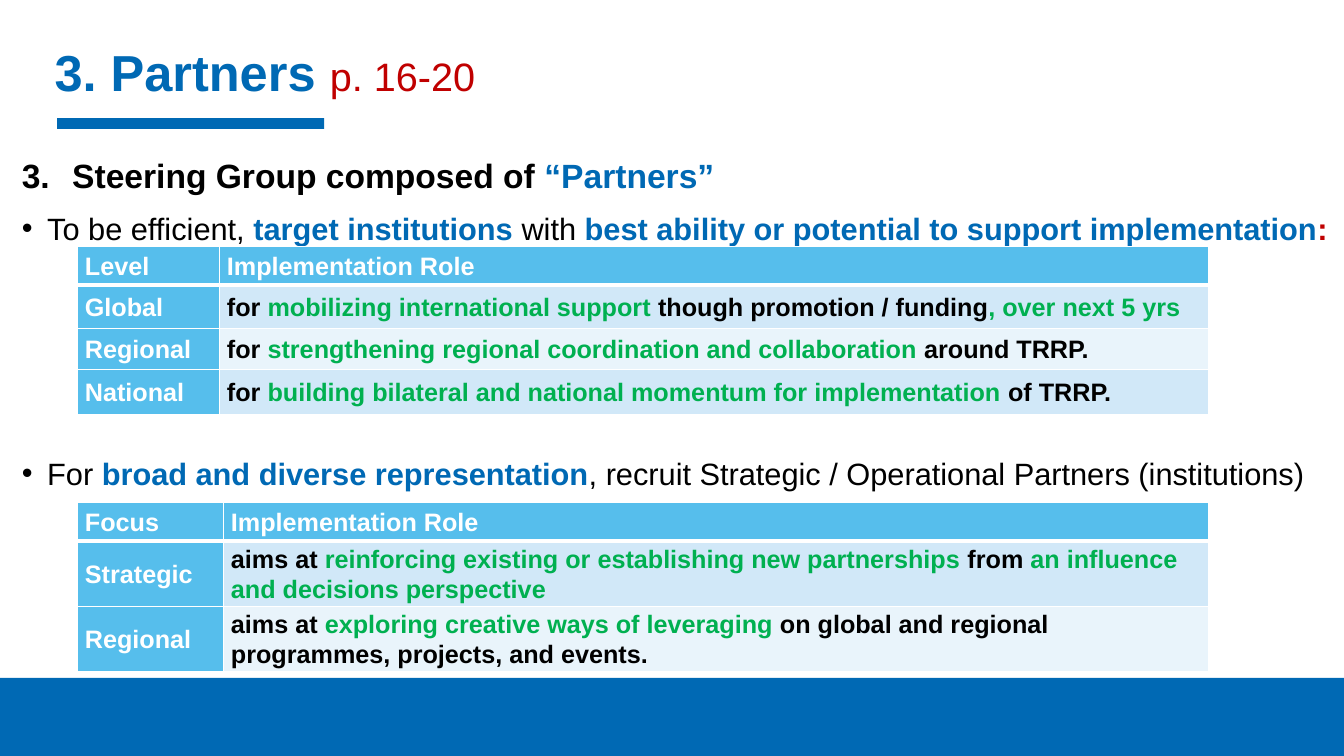
from lxml.etree import SubElement
from pptx import Presentation
from pptx.dml.color import RGBColor
from pptx.enum.shapes import MSO_SHAPE as Shape
from pptx.enum.text import MSO_ANCHOR as Anchor, PP_ALIGN as Align
from pptx.oxml import parse_xml
from pptx.oxml.ns import nsdecls, qn
from pptx.util import Cm, Pt

BLUE = RGBColor(0x00, 0x69, 0xB4)
SKY = RGBColor(0x56, 0xBE, 0xEC)
BANDS = [RGBColor(0xD1, 0xE8, 0xF8), RGBColor(0xE9, 0xF4, 0xFB)]
RED = RGBColor(0xC0, 0x00, 0x00)
GREEN = RGBColor(0x00, 0xB0, 0x50)
BLACK = RGBColor(0x00, 0x00, 0x00)
WHITE = RGBColor(0xFF, 0xFF, 0xFF)


def add_spans(para, spans):
    """Append (text, size, colour, bold) spans to a paragraph."""
    for text, size, color, bold in spans:
        span = para.add_run()
        span.text = text
        span.font.color.rgb = color
        for name, value in {"name": "Arial", "size": Pt(size), "bold": bold}.items():
            setattr(span.font, name, value)


def set_borders(cell, widths):
    """Draw white cell edges; widths maps an edge letter to points."""
    props = cell._tc.get_or_add_tcPr()
    for index, (edge, width) in enumerate(widths.items()):
        props.insert(index, parse_xml(
            f'<a:ln{edge} {nsdecls("a")} w="{Pt(width)}"><a:solidFill>'
            f'<a:srgbClr val="{WHITE}"/></a:solidFill></a:ln{edge}>'))


deck = Presentation()
deck.slide_width, deck.slide_height = Cm(33.87), Cm(19.05)
page = deck.slides.add_slide(deck.slide_layouts[5])

# Title underline and footer band
for left, top, width, height in [(1.44, 2.98, 6.73, 0.27), (0, 17.08, 33.87, 1.97)]:
    bar = page.shapes.add_shape(Shape.RECTANGLE, Cm(left), Cm(top), Cm(width), Cm(height))
    bar.shadow.inherit = False
    bar.fill.solid()
    bar.fill.fore_color.rgb = BLUE
    bar.line.fill.background()

# Title
title = page.shapes.title
title.left, title.top, title.width, title.height = Cm(1.12), Cm(1.08), Cm(32), Cm(1.8)
title.text_frame.vertical_anchor = Anchor.TOP
heading = title.text_frame.paragraphs[0]
heading.alignment = Align.LEFT
heading.line_spacing = 0.9
add_spans(heading, [("3. Partners ", 36.1, BLUE, True), ("p. 16-20", 28.3, RED, False)])

# Body points; the wide space before the last one leaves room for the first table
points = [
    ("buAutoNum", {"type": "arabicPeriod", "startAt": "3"}, 1.27, 0,
     [("Steering Group composed of ", 24, BLACK, True), ("“Partners”", 24, BLUE, True)]),
    ("buChar", {"char": "•"}, 0.64, 0,
     [("To be efficient, ", 22, BLACK, False),
      ("target institutions ", 22, BLUE, True),
      ("with ", 22, BLACK, False),
      ("best ability or potential to support implementation", 22, BLUE, True),
      (":", 22, RED, True)]),
    ("buChar", {"char": "•"}, 0.64, 139,
     [("For ", 22, BLACK, False),
      ("broad and diverse representation", 22, BLUE, True),
      (", recruit Strategic / Operational Partners (institutions)", 22, BLACK, False)]),
]
body = page.shapes.add_textbox(Cm(0.3), Cm(3.84), Cm(33.5), Cm(8.6)).text_frame
frame_format = {"word_wrap": True, "vertical_anchor": Anchor.TOP, "margin_left": Cm(0.25),
                "margin_right": 0, "margin_top": 0, "margin_bottom": 0}
for name, value in frame_format.items():
    setattr(body, name, value)
for index, (bullet, options, indent, before, spans) in enumerate(points):
    para = body.add_paragraph() if index else body.paragraphs[0]
    props = para._p.get_or_add_pPr()
    props.set("marL", str(Cm(indent)))
    props.set("indent", str(-Cm(indent)))
    SubElement(props, qn("a:buFont"), typeface="Arial")
    SubElement(props, qn(f"a:{bullet}"), **options)
    para.line_spacing = 1.07
    para.space_after = Pt(8)
    if before:
        para.space_before = Pt(before)
    add_spans(para, spans)

# Tables: top, column widths, row heights, rows of (label, role parts)
# Role parts alternate between black and green
tables = [
    (6.22, [3.58, 24.92], [0.97, 1.09, 1.04, 1.12], [
        ("Level", ["Implementation Role"]),
        ("Global", ["for ", "mobilizing international support ",
                    "though promotion / funding", ", over next 5 yrs"]),
        ("Regional", ["for ", "strengthening regional coordination and collaboration ",
                      "around TRRP."]),
        ("National", ["for ", "building bilateral and national momentum for implementation ",
                      "of TRRP."]),
    ]),
    (12.67, [3.68, 24.82], [0.97, 1.64, 1.64], [
        ("Focus", ["Implementation Role"]),
        ("Strategic", ["aims at ", "reinforcing existing or establishing new partnerships ",
                       "from ", "an influence and decisions perspective"]),
        ("Regional", ["aims at ", "exploring creative ways of leveraging ",
                      "on global and regional programmes, projects, and events."]),
    ]),
]
cell_format = {"vertical_anchor": Anchor.MIDDLE, "margin_left": Cm(0.18),
               "margin_right": Cm(0.18), "margin_top": 0, "margin_bottom": 0}
for top, widths, heights, rows in tables:
    grid = page.shapes.add_table(len(rows), 2, Cm(1.96), Cm(top),
                                 Cm(sum(widths)), Cm(sum(heights))).table
    for column, width in zip(grid.columns, widths):
        column.width = Cm(width)
    for row, height in zip(grid.rows, heights):
        row.height = Cm(height)
    for r, (label, role) in enumerate(rows):
        for c, parts in enumerate([[label], role]):
            cell = grid.cell(r, c)
            for name, value in cell_format.items():
                setattr(cell, name, value)
            is_heading = r == 0 or c == 0
            cell.fill.solid()
            cell.fill.fore_color.rgb = SKY if is_heading else BANDS[(r - 1) % 2]
            set_borders(cell, {"L": 1, "R": 1, "T": 3 if r == 1 else 1, "B": 3 if r == 0 else 1})
            colors = [WHITE] if is_heading else [BLACK, GREEN]
            para = cell.text_frame.paragraphs[0]
            para.line_spacing = 1.07
            add_spans(para, [(text, 18, colors[i % len(colors)], True)
                             for i, text in enumerate(parts)])

deck.save("out.pptx")
